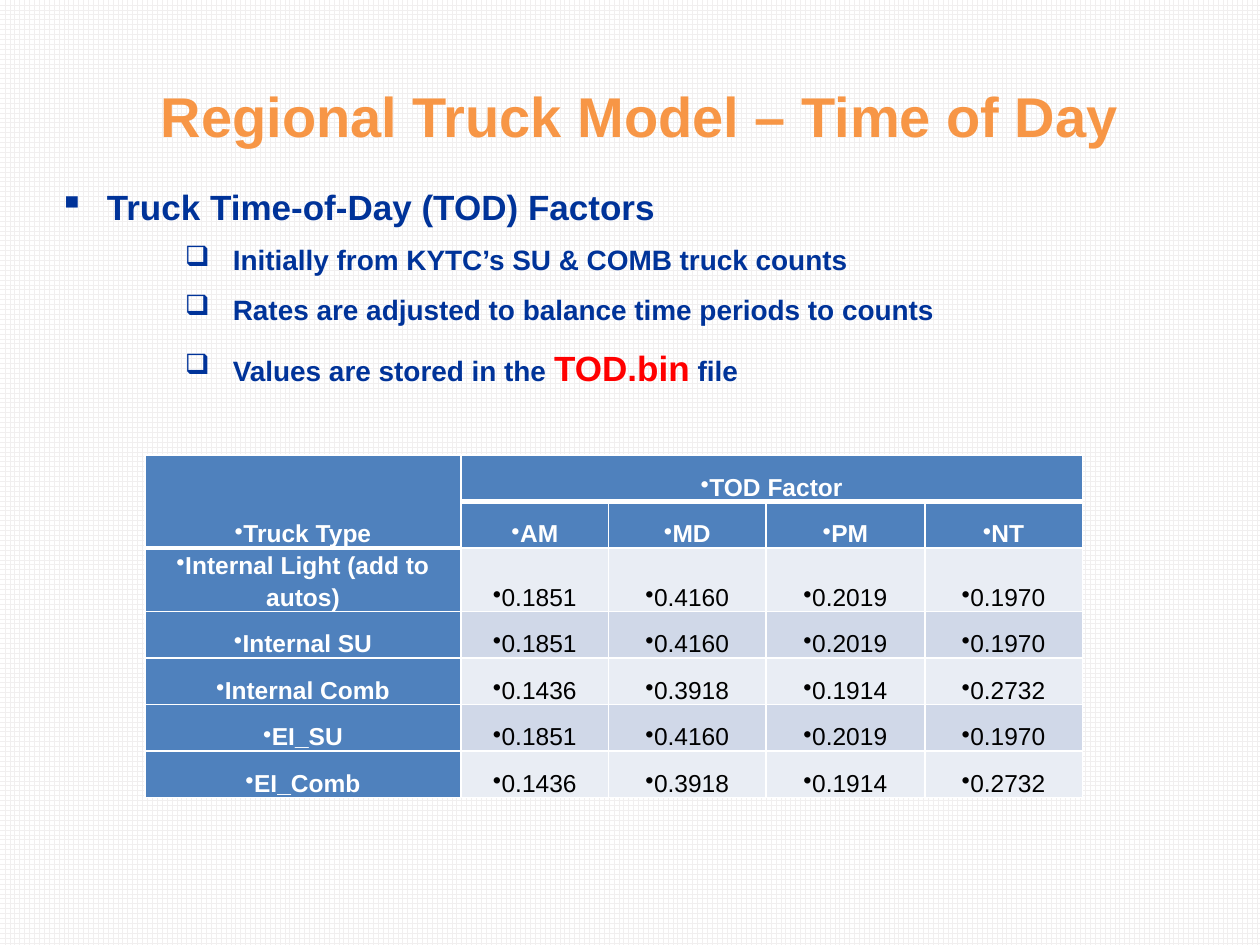
from pptx import Presentation
from pptx.dml.color import RGBColor
from pptx.enum.dml import MSO_PATTERN
from pptx.enum.text import MSO_ANCHOR, MSO_AUTO_SIZE, PP_ALIGN
from pptx.oxml.ns import qn
from pptx.util import Inches, Pt
from lxml import etree

LARGE_GRID = MSO_PATTERN.LARGE_GRID
MIDDLE, BOTTOM, TOP = MSO_ANCHOR.MIDDLE, MSO_ANCHOR.BOTTOM, MSO_ANCHOR.TOP
NO_AUTOSIZE = MSO_AUTO_SIZE.NONE
CENTER, LEFT = PP_ALIGN.CENTER, PP_ALIGN.LEFT

COLORS = {
    "title": "F79646",
    "body": "003399",
    "highlight": "FF0000",
    "header": "4F81BD",
    "light_band": "E9EDF4",
    "dark_band": "D0D8E8",
    "white": "FFFFFF",
    "black": "000000",
    "grid": "F1EFEF",
}
HEADER_ROWS = [
    ["Truck Type", "TOD Factor", "", "", ""],
    ["", "AM", "MD", "PM", "NT"],
]
SINGLE_UNIT = ["0.1851", "0.4160", "0.2019", "0.1970"]
COMBINATION = ["0.1436", "0.3918", "0.1914", "0.2732"]
FACTOR_ROWS = [
    ["Internal Light (add to autos)", *SINGLE_UNIT],
    ["Internal SU", *SINGLE_UNIT],
    ["Internal Comb", *COMBINATION],
    ["EI_SU", *SINGLE_UNIT],
    ["EI_Comb", *COMBINATION],
]
COLUMN_WIDTHS = [2.51, 1.17, 1.25, 1.26, 1.25]
ROW_HEIGHT = 0.37


def rgb(name):
    return RGBColor.from_string(COLORS[name])


def apply_format(target, values):
    for name, value in values.items():
        setattr(target, name, value)


class SlideBuilder:
    font_name = "Arial"

    def __init__(self, slide):
        self.slide = slide

    def background(self):
        fill = self.slide.background.fill
        fill.patterned()
        fill.pattern = LARGE_GRID
        fill.fore_color.rgb = rgb("grid")
        fill.back_color.rgb = rgb("white")

    def run(self, paragraph, text, size, color, bold=True):
        run = paragraph.add_run()
        run.text = text
        apply_format(run.font, {"name": self.font_name, "size": Pt(size), "bold": bold})
        run.font.color.rgb = rgb(color)

    def bullet(self, paragraph, character, margin=0, indent=0):
        properties = paragraph._p.get_or_add_pPr()
        properties.set("marL", str(Inches(margin)))
        properties.set("indent", str(Inches(indent)))
        etree.SubElement(properties, qn("a:buChar"), char=character)

    def text_box(self, left, top, width, height, anchor, wrap):
        shape = self.slide.shapes.add_textbox(
            Inches(left), Inches(top), Inches(width), Inches(height))
        apply_format(shape.text_frame, {
            "auto_size": NO_AUTOSIZE, "word_wrap": wrap, "vertical_anchor": anchor})
        return shape.text_frame

    def title(self, text):
        paragraph = self.text_box(1, 0.59, 8.16, 0.64, MIDDLE, False).paragraphs[0]
        paragraph.alignment = CENTER
        self.run(paragraph, text, 32, "title")

    def bullet_list(self, heading, items):
        frame = self.text_box(0.37, 1.42, 9, 3.77, TOP, True)
        paragraph = frame.paragraphs[0]
        paragraph.alignment = LEFT
        self.bullet(paragraph, "▪", 0.38, -0.38)
        self.run(paragraph, heading, 20, "body")
        for space, runs in items:
            paragraph = frame.add_paragraph()
            apply_format(paragraph, {
                "level": 2, "alignment": LEFT, "space_before": Pt(space)})
            self.bullet(paragraph, "❑", 1.38, -0.38)
            for text, size, color in runs:
                self.run(paragraph, text, size, color)

    def border(self, cell, side, width):
        line = etree.SubElement(
            cell._tc.get_or_add_tcPr(), qn(f"a:ln{side}"), w=str(Pt(width)))
        fill = etree.SubElement(line, qn("a:solidFill"))
        etree.SubElement(fill, qn("a:srgbClr"), val=COLORS["white"])

    def cell(self, cell, text, row, column):
        heavy_edge = 1 if column else 2
        widths = {
            "L": 1,
            "R": 1,
            "T": 3 if row == heavy_edge else 1,
            "B": 3 if row < heavy_edge else 1,
        }
        for side, width in widths.items():
            self.border(cell, side, width)
        apply_format(cell, {
            "margin_left": Inches(0.07), "margin_right": Inches(0.07),
            "margin_top": 0, "margin_bottom": 0, "vertical_anchor": BOTTOM})
        is_header = row < len(HEADER_ROWS) or column == 0
        band = "dark_band" if row % 2 else "light_band"
        cell.fill.solid()
        cell.fill.fore_color.rgb = rgb("header" if is_header else band)
        if text:
            paragraph = cell.text_frame.paragraphs[0]
            apply_format(paragraph, {"alignment": CENTER, "line_spacing": 1.15})
            self.bullet(paragraph, "•")
            self.run(paragraph, text, 14, "white" if is_header else "black", is_header)

    def factor_table(self, rows):
        table = self.slide.shapes.add_table(
            len(rows), len(COLUMN_WIDTHS), Inches(1.15), Inches(3.61),
            Inches(sum(COLUMN_WIDTHS)), Inches(ROW_HEIGHT * len(rows))).table
        for column, width in zip(table.columns, COLUMN_WIDTHS):
            column.width = Inches(width)
        for row in table.rows:
            row.height = Inches(ROW_HEIGHT)
        table.cell(0, 0).merge(table.cell(1, 0))
        table.cell(0, 1).merge(table.cell(0, 4))
        for row, texts in enumerate(rows):
            for column, text in enumerate(texts):
                self.cell(table.cell(row, column), text, row, column)


def main():
    presentation = Presentation()
    presentation.slide_width = Inches(10)
    presentation.slide_height = Inches(7.5)
    builder = SlideBuilder(presentation.slides.add_slide(presentation.slide_layouts[6]))
    builder.background()
    builder.title("Regional Truck Model – Time of Day")
    builder.bullet_list("Truck Time-of-Day (TOD) Factors", [
        (9, [("Initially from KYTC’s SU & COMB truck counts", 16, "body")]),
        (9, [("Rates are adjusted to balance time periods to counts", 16, "body")]),
        (12, [
            ("Values are stored in the ", 16, "body"),
            ("TOD.bin", 20, "highlight"),
            (" file", 16, "body"),
        ]),
    ])
    builder.factor_table(HEADER_ROWS + FACTOR_ROWS)
    presentation.save("out.pptx")


if __name__ == "__main__":
    main()
